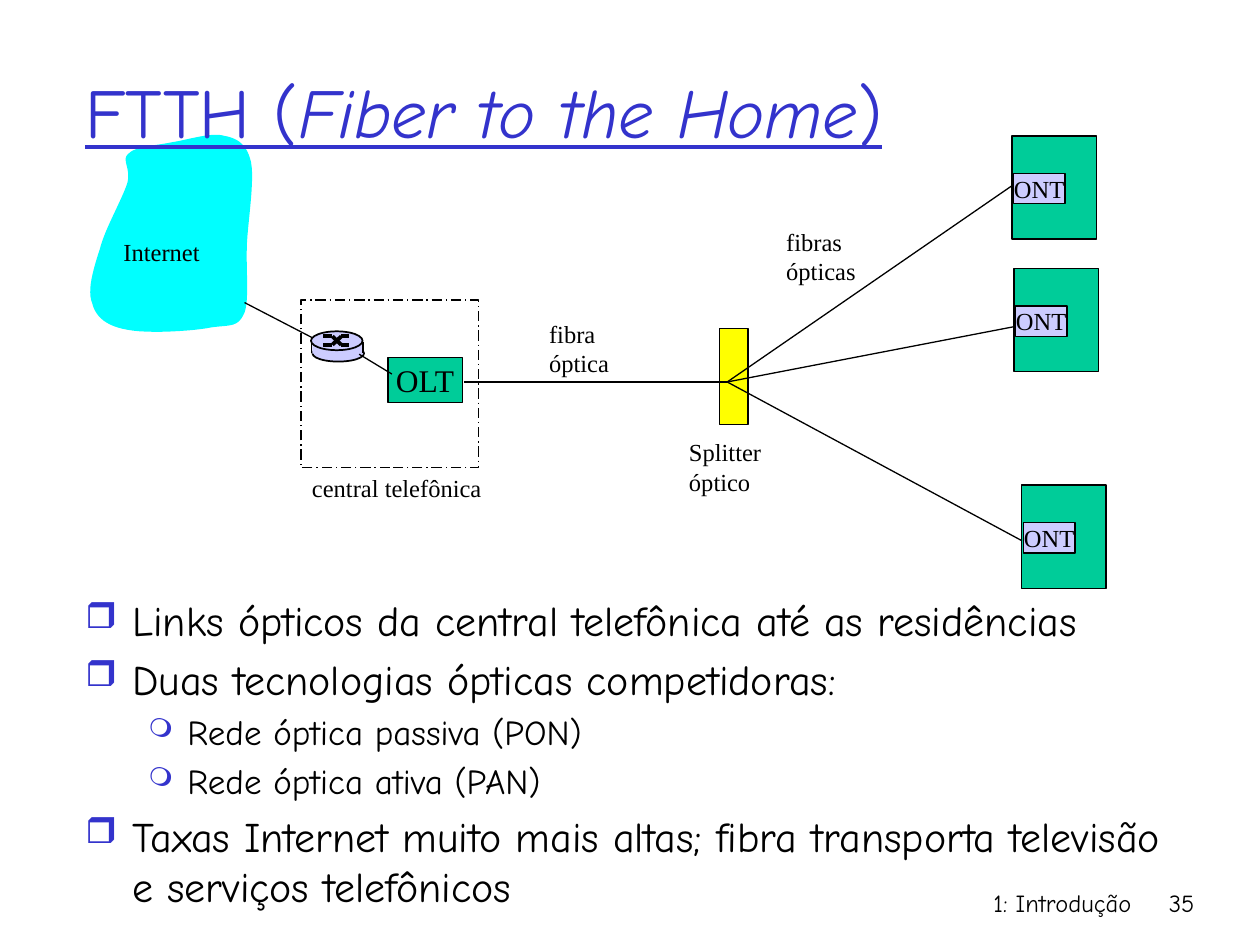
import dataclasses
import itertools

import pptx
import pptx.dml.color
import pptx.enum.dml
import pptx.enum.shapes
import pptx.enum.text
import pptx.oxml.ns
import pptx.util
from lxml import etree

Cm, Pt = pptx.util.Cm, pptx.util.Pt
SHAPE = pptx.enum.shapes.MSO_SHAPE
ALIGN = pptx.enum.text.PP_ALIGN
ANCHOR = pptx.enum.text.MSO_ANCHOR
qn = pptx.oxml.ns.qn


@dataclasses.dataclass(frozen=True)
class Theme:
    ink: str = "000000"
    accent: str = "3333CC"
    green: str = "00CC99"
    lilac: str = "CCCCFF"
    yellow: str = "FFFF00"
    cyan: str = "00FFFF"
    heading_font: str = "Comic Neue"
    label_font: str = "Times New Roman"
    title: int = 40
    body: int = 24
    detail: int = 20
    device: int = 18
    label: int = 14
    thin: float = 0.75
    outline: float = 1
    stroke: float = 2.25


@dataclasses.dataclass(frozen=True)
class Box:
    left: float
    top: float
    width: float = 0
    height: float = 0

    def inner(self, x, y, width=0, height=0):
        return Box(self.left + x, self.top + y, width, height)

    def lengths(self):
        return [Cm(v) for v in (self.left, self.top, self.width, self.height)]


THEME = Theme()


def rgb(value):
    return pptx.dml.color.RGBColor.from_string(value)


def write(para, text, size=THEME.label, font=THEME.label_font, color=THEME.ink,
          italic=False, underline=False, align=ALIGN.LEFT):
    para.alignment = align
    span = para.add_run()
    span.text = text
    span.font.size = Pt(size)
    span.font.name = font
    span.font.color.rgb = rgb(color)
    span.font.italic = italic
    span.font.underline = underline


def add_text(page, box, lines=(), wrap=False, anchor=ANCHOR.TOP, **style):
    frame = page.shapes.add_textbox(*box.lengths()).text_frame
    frame.word_wrap = wrap
    frame.vertical_anchor = anchor
    for index, line in enumerate(lines):
        para = frame.add_paragraph() if index else frame.paragraphs[0]
        write(para, line, **style)
    return frame


def paint(shape, fill=None, weight=None, dash=None):
    shape.shadow.inherit = False
    if fill:
        shape.fill.solid()
        shape.fill.fore_color.rgb = rgb(fill)
    else:
        shape.fill.background()
    if weight:
        shape.line.color.rgb = rgb(THEME.ink)
        shape.line.width = Pt(weight)
        shape.line.dash_style = dash
    else:
        shape.line.fill.background()


def add_block(page, box, fill=None, weight=THEME.thin, kind=SHAPE.RECTANGLE,
              dash=None, text=None, size=THEME.label):
    block = page.shapes.add_shape(kind, *box.lengths())
    paint(block, fill, weight, dash)
    if text:
        block.text_frame.word_wrap = False
        block.text_frame.vertical_anchor = ANCHOR.MIDDLE
        write(block.text_frame.paragraphs[0], text, size=size, align=ALIGN.CENTER)


def add_line(page, box, start, end, weight=THEME.thin):
    ends = [Cm(v) for x, y in (start, end) for v in (box.left + x, box.top + y)]
    line = page.shapes.add_connector(pptx.enum.shapes.MSO_CONNECTOR.STRAIGHT, *ends)
    line.line.color.rgb = rgb(THEME.ink)
    line.line.width = Pt(weight)
    etree.SubElement(line._element.spPr, qn("a:effectLst"))


def bezier(points, steps=12):
    a, b, c, d = points
    for t in (step / steps for step in range(1, steps + 1)):
        s = 1 - t
        yield tuple(s**3 * a[i] + 3 * s * s * t * b[i] + 3 * s * t * t * c[i] + t**3 * d[i]
                    for i in (0, 1))


def draw_internet(page, box):
    outline = [
        (3.23, 0.53), (3.15, 0.18), (2.97, 0.05), (2.69, 0), (2.44, -0.08), (1.96, 0.08),
        (1.63, 0.13), (1.32, 0.2), (0.91, 0.2), (0.76, 0.36), (0.61, 0.48), (0.81, 0.64),
        (0.74, 0.94), (0.64, 1.27), (0.28, 1.88), (0.18, 2.29), (0.05, 2.69), (-0.08, 3.12),
        (0.03, 3.38), (0.1, 3.66), (0.33, 3.84), (0.74, 3.91), (1.14, 3.99), (2.06, 3.94),
        (2.44, 3.86), (2.84, 3.81), (2.97, 3.86), (3.1, 3.56), (3.2, 3.28), (3.12, 2.64),
        (3.15, 2.13), (3.18, 1.65), (3.3, 0.89), (3.23, 0.53),
    ]
    curve = [point for i in range(0, len(outline) - 1, 3) for point in bezier(outline[i:i + 4])]
    corners = [(Cm(box.left + x), Cm(box.top + y)) for x, y in curve]
    builder = page.shapes.build_freeform(*corners[-1])
    builder.add_line_segments(corners[:-1], close=True)
    paint(builder.convert_to_shape(), THEME.cyan)
    add_text(page, box.inner(0.41, 1.91, 2.54, 0.84), ["Internet"], wrap=True)


def draw_router(page, box):
    add_block(page, box.inner(0.03, 0.28, 1.04, 0.33), THEME.lilac, THEME.outline, SHAPE.OVAL)
    add_block(page, box.inner(0.03, 0.25, 1.02, 0.2), THEME.lilac, None)
    for x in (0.01, 1.05):
        add_line(page, box, (x, 0.22), (x, 0.43), THEME.outline)
    add_block(page, box.inner(0, 0, 1.04, 0.38), THEME.lilac, THEME.outline, SHAPE.OVAL)
    upper, lower = 0.1, 0.27
    for near, far in ((upper, lower), (lower, upper)):
        track = zip((0.25, 0.43, 0.61, 0.76), (near, near, far, far))
        for start, end in itertools.pairwise(track):
            add_line(page, box, start, end, THEME.stroke)


def draw_central(page, box):
    add_block(page, box, dash=pptx.enum.dml.MSO_LINE.LONG_DASH_DOT)
    add_block(page, box.inner(1.75, 1.16, 1.5, 0.91), THEME.green, text="OLT", size=THEME.device)
    add_text(page, box.inner(-0.03, 3.37, 3.96, 0.86), ["central telefônica"])
    draw_router(page, box.inner(0.2, 0.63))
    add_line(page, box, (1.17, 1.09), (1.83, 1.49))


def draw_splitter(page, box):
    add_block(page, box, THEME.yellow)
    add_text(page, box.inner(-0.86, 2.06, 1.98, 1.45), ["Splitter", "óptico"])


def draw_home(page, box):
    add_block(page, box, THEME.green)
    add_block(page, box.inner(0.03, 0.76, 1.04, 0.61), THEME.lilac, text="ONT")


def draw_network(page, box):
    for x, y in ((18.57, 0), (18.61, 2.67), (18.77, 7.04)):
        draw_home(page, box.inner(x, y, 1.7, 2.08))
    draw_splitter(page, box.inner(12.67, 3.89, 0.58, 1.93))
    hub = (12.83, 4.96)
    for end in ((7.52, 4.96), (18.59, 0.99), (18.64, 3.84), (18.77, 8.16)):
        add_line(page, box, hub, end)
    draw_central(page, box.inner(4.24, 3.31, 3.58, 3.38))
    add_text(page, box.inner(8.99, 3.56, 1.73, 1.45), ["fibra", "óptica"])
    add_text(page, box.inner(13.77, 1.71, 1.93, 1.45), ["fibras", "ópticas"])
    draw_internet(page, box)
    add_line(page, box, (3.1, 3.36), (4.47, 4.07))


def draw_title(page, box):
    para = add_text(page, box, wrap=True, anchor=ANCHOR.MIDDLE).paragraphs[0]
    for text, italic in (("FTTH (", False), ("Fiber to the Home", True), (")", False)):
        write(para, text, size=THEME.title, font=THEME.heading_font, color=THEME.accent,
              italic=italic, underline=True)


def set_bullet(para, symbol, scale, margin, hanging):
    props = para._p.get_or_add_pPr()
    props.set("marL", str(Cm(margin)))
    props.set("indent", str(-Cm(hanging)))
    color = etree.SubElement(props, qn("a:buClr"))
    etree.SubElement(color, qn("a:srgbClr"), val=THEME.accent)
    etree.SubElement(props, qn("a:buSzPct"), val=str(scale * 1000))
    etree.SubElement(props, qn("a:buChar"), char=symbol)


def draw_body(page, box):
    levels = [
        dict(symbol="❒", scale=85, margin=0.95, hanging=0.95),
        dict(symbol="❍", scale=75, margin=2.06, hanging=0.79),
    ]
    sizes = [THEME.body, THEME.detail]
    items = [
        (0, "Links ópticos da central telefônica até as residências"),
        (0, "Duas tecnologias ópticas competidoras:"),
        (1, "Rede óptica passiva (PON)"),
        (1, "Rede óptica ativa (PAN)"),
        (0, "Taxas Internet muito mais altas; fibra transporta televisão e serviços telefônicos"),
    ]
    frame = add_text(page, box, [text for _, text in items], wrap=True, font=THEME.heading_font)
    for para, (level, _) in zip(frame.paragraphs, items):
        para.level = level
        para.space_before = Pt(sizes[level] * 0.2)
        para.runs[0].font.size = Pt(sizes[level])
        set_bullet(para, **levels[level])


def draw_footer(page, box):
    number_width = 1.27
    name_width = box.width - number_width
    for text, x, width in (("1: Introdução", 0, name_width), ("35", name_width, number_width)):
        add_text(page, box.inner(x, 0, width, box.height), [text], wrap=True,
                 font=THEME.heading_font, align=ALIGN.RIGHT)


def main():
    deck = pptx.Presentation()
    deck.slide_width, deck.slide_height = Cm(25.4), Cm(19.05)
    page = deck.slides.add_slide(deck.slide_layouts[6])
    draw_network(page, Box(1.83, 2.74))
    draw_title(page, Box(1.47, 0.63, 21.59, 3.18))
    draw_body(page, Box(1.47, 11.86, 22.86, 4.88))
    draw_footer(page, Box(15.04, 17.78, 9.29, 1.27))
    deck.save("out.pptx")


if __name__ == "__main__":
    main()
